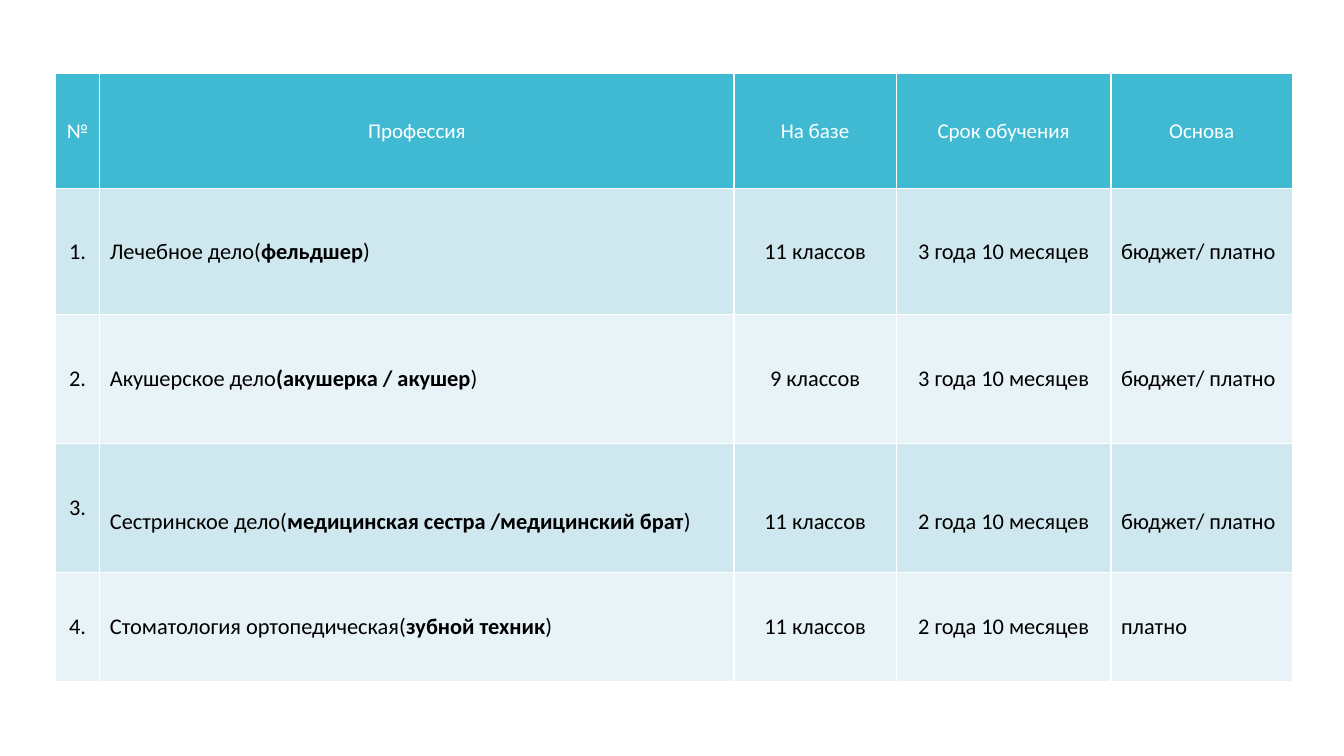
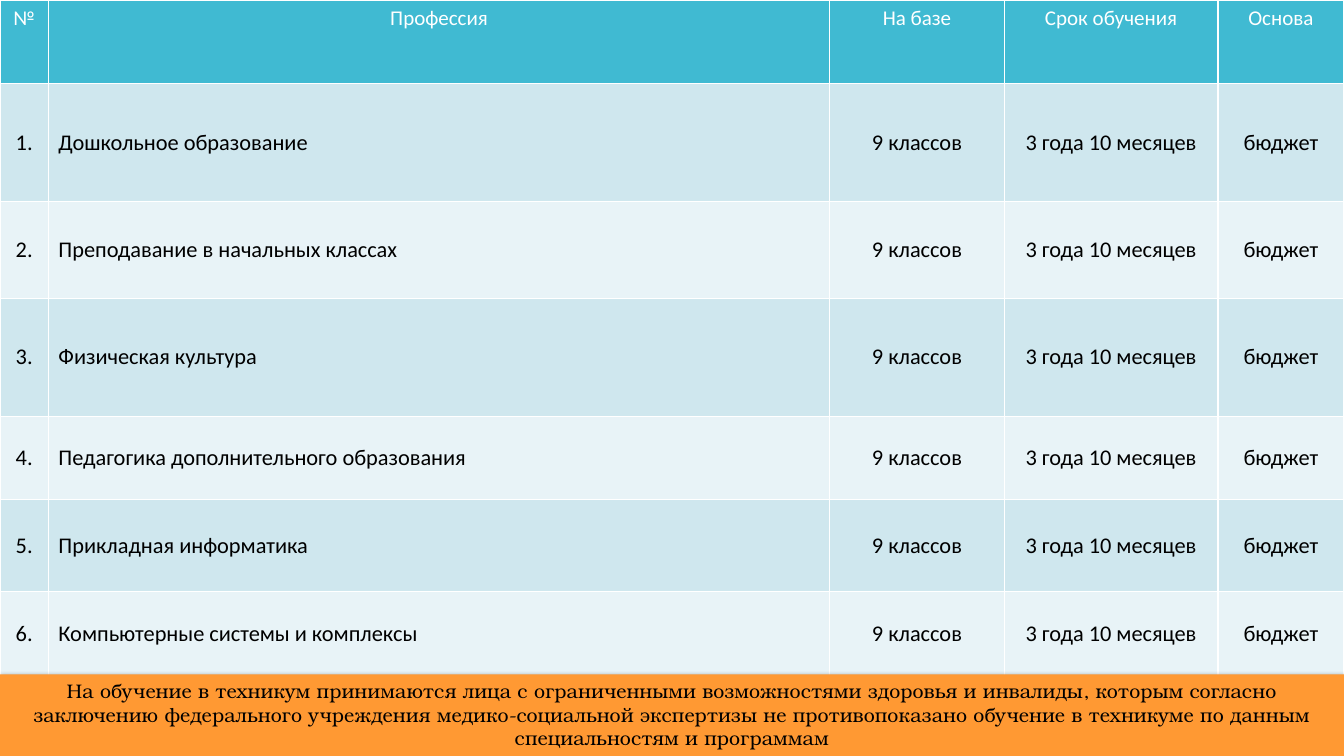
from lxml import etree
from pptx import Presentation
from pptx.dml.color import RGBColor
from pptx.enum.shapes import MSO_SHAPE
from pptx.enum.text import MSO_ANCHOR, PP_ALIGN
from pptx.oxml.ns import qn
from pptx.util import Inches, Pt

WHITE = RGBColor(0xFF, 0xFF, 0xFF)
BLACK = RGBColor(0x00, 0x00, 0x00)
TEAL = RGBColor(0x40, 0xBA, 0xD2)
BANDS = RGBColor(0xCF, 0xE7, 0xEE), RGBColor(0xE8, 0xF3, 0xF7)
ORANGE = RGBColor(0xFF, 0x99, 0x33)

HEAD = ["№", "Профессия", "На базе", "Срок обучения", "Основа"]
LEFT, MID = PP_ALIGN.LEFT, PP_ALIGN.CENTER

# Each trade is plain text, bold text, plain text.
MEDIC = [
    [("Лечебное дело(", "фельдшер", ")"), "11 классов", "3 года 10 месяцев", "бюджет/ платно"],
    [("Акушерское дело", "(акушерка / акушер", ")"), "9 классов", "3 года 10 месяцев",
     "бюджет/ платно"],
    [("Сестринское дело(", "медицинская сестра /медицинский брат", ")"), "11 классов",
     "2 года 10 месяцев", "бюджет/ платно"],
    [("Стоматология ортопедическая(", "зубной техник", ")"), "11 классов",
     "2 года 10 месяцев", "платно"],
]
TEACH = [
    [trade, "9 классов", "3 года 10 месяцев", "бюджет"]
    for trade in (
        "Дошкольное образование",
        "Преподавание в начальных классах",
        "Физическая культура",
        "Педагогика дополнительного образования",
        "Прикладная информатика",
        "Компьютерные системы и комплексы",
    )
]
NOTE = (
    "На обучение в техникум принимаются лица с ограниченными возможностями здоровья "
    "и инвалиды, которым согласно заключению федерального учреждения медико-социальной "
    "экспертизы не противопоказано обучение в техникуме по данным специальностям и программам"
)


class Deck:
    styles = {
        "head": {"name": "Calibri", "size": Pt(15), "bold": False},
        "body": {"name": "Calibri", "size": Pt(16), "bold": False},
        "note": {"name": "TeX Gyre Bonum", "size": Pt(14), "bold": False},
    }
    inks = {"head": WHITE, "body": BLACK, "note": BLACK}

    def __init__(self):
        self.prs = Presentation()
        self.prs.slide_width = Inches(13.33)
        self.prs.slide_height = Inches(7.5)

    def page(self):
        self.slide = self.prs.slides.add_slide(self.prs.slide_layouts[6])

    def label(self, frame, text, style, align):
        """Fill the first paragraph; in a tuple every second piece is bold."""
        para = frame.paragraphs[0]
        para.alignment = align
        for i, piece in enumerate([text] if isinstance(text, str) else text):
            run = para.add_run()
            run.text = piece
            for key, value in self.styles[style].items():
                setattr(run.font, key, value)
            run.font.color.rgb = self.inks[style]
            if i % 2:
                run.font.bold = True

    def table(self, left, top, cols, rows, data, aligns, anchor, drop=None):
        """Draw numbered rows; drop maps (row, column) to a larger top margin."""
        drop = drop or {}
        grid = self.slide.shapes.add_table(
            len(rows), len(cols), Inches(left), Inches(top),
            Inches(sum(cols)), Inches(sum(rows))).table
        for col, width in zip(grid.columns, cols):
            col.width = Inches(width)
        for row, height in zip(grid.rows, rows):
            row.height = Inches(height)
        lines = [HEAD] + [[f"{n}.", *line] for n, line in enumerate(data, 1)]
        for r, line in enumerate(lines):
            for c, text in enumerate(line):
                cell = grid.cell(r, c)
                cell.fill.solid()
                cell.fill.fore_color.rgb = BANDS[(r - 1) % 2] if r else TEAL
                cell.vertical_anchor = MSO_ANCHOR.MIDDLE if r else anchor
                if (r, c) in drop:
                    cell.margin_top = Inches(drop[r, c])
                self.label(cell.text_frame, text, "body" if r else "head",
                           aligns[c] if r else MID)

    def banner(self, top, height, text):
        box = self.slide.shapes.add_shape(
            MSO_SHAPE.RECTANGLE, 0, Inches(top), self.prs.slide_width, Inches(height))
        box.fill.solid()
        box.fill.fore_color.rgb = ORANGE
        box.line.fill.background()
        self.shade(box)
        box.text_frame.word_wrap = True
        box.text_frame.vertical_anchor = MSO_ANCHOR.TOP
        self.label(box.text_frame, text, "note", MID)

    def shade(self, box):
        """Give the shape a soft black shadow straight below it."""
        box.shadow.inherit = False
        effects = box.element.spPr.find(qn("a:effectLst"))
        outer = etree.SubElement(effects, qn("a:outerShdw"), blurRad=str(Pt(3.5)),
                                 dist=str(Pt(1.1)), dir="5400000", rotWithShape="0")
        ink = etree.SubElement(outer, qn("a:srgbClr"), val=str(BLACK))
        etree.SubElement(ink, qn("a:alpha"), val="45000")


def main():
    deck = Deck()

    deck.page()
    drop = {(3, c): 0.32 for c in range(1, 5)}
    deck.table(0.55, 0.73, [0.44, 6.29, 1.61, 2.13, 1.8], [1.14, 1.25, 1.28, 1.28, 1.08],
               MEDIC, [MID, LEFT, MID, MID, LEFT], MSO_ANCHOR.MIDDLE, drop)

    deck.page()
    deck.table(0, 0, [0.48, 7.75, 1.73, 2.12, 1.25],
               [0.83, 1.17, 0.96, 1.17, 0.83, 0.91, 0.83],
               TEACH, [MID, LEFT, MID, MID, MID], MSO_ANCHOR.TOP)
    deck.banner(6.69, 0.81, NOTE)

    deck.prs.save("out.pptx")


if __name__ == "__main__":
    main()
